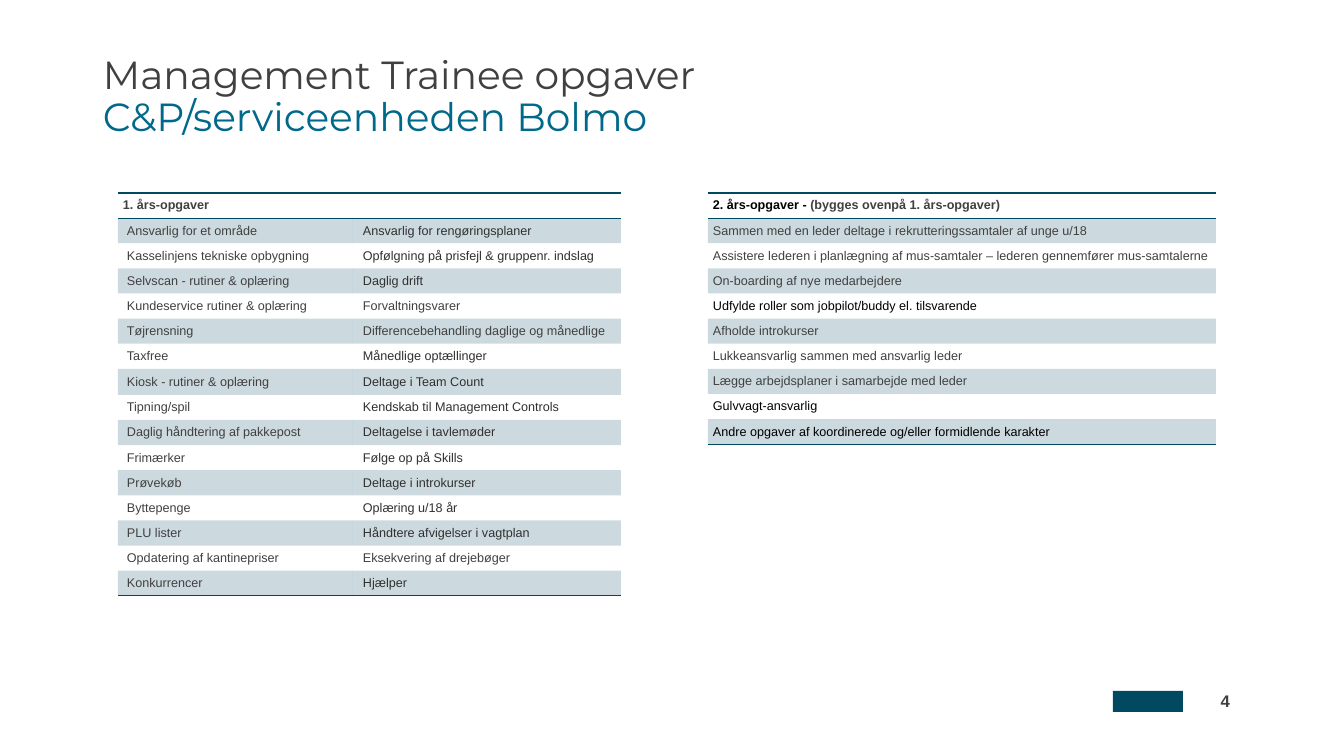
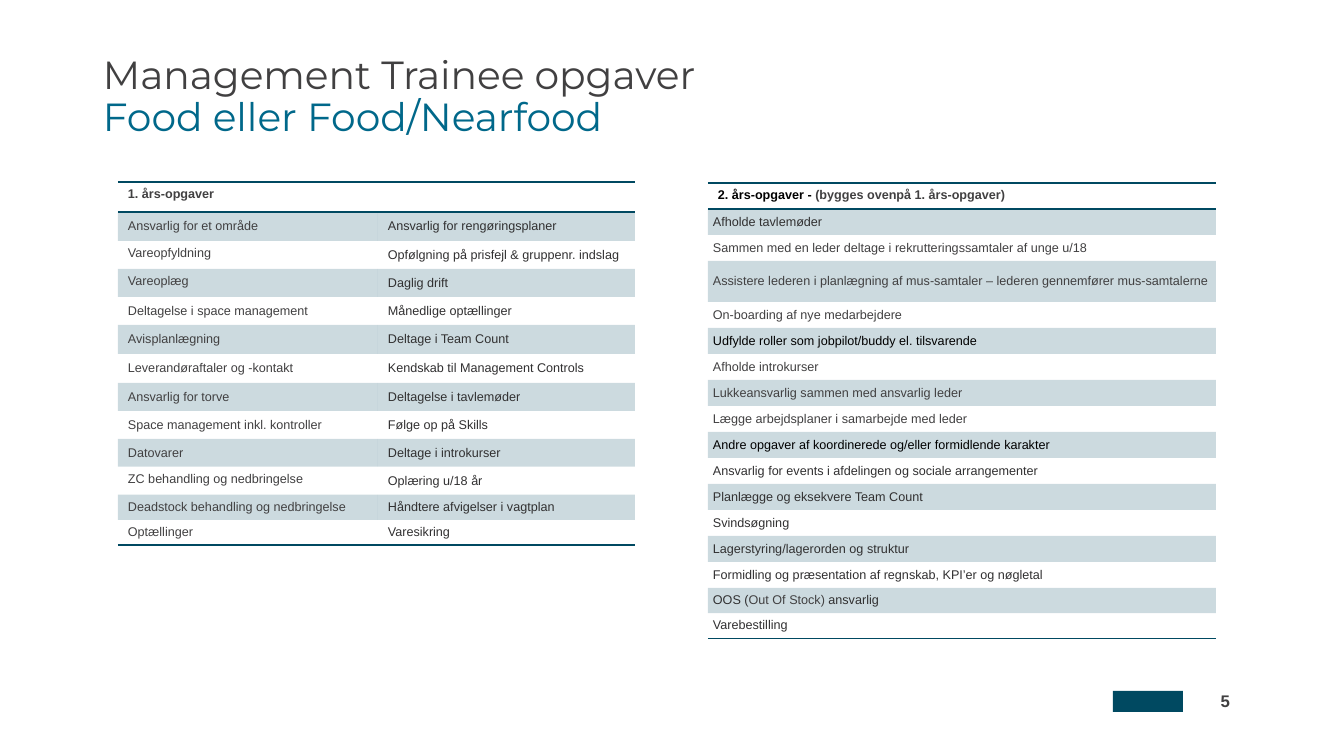
"""Build two slides of trainee tasks, each with a first-year and a second-year table."""
import dataclasses

import lxml.etree
import pptx
import pptx.dml.color
import pptx.enum.shapes
import pptx.enum.text
import pptx.oxml.ns
import pptx.util


@dataclasses.dataclass(frozen=True)
class Theme:
    teal: str = "004961"
    blue: str = "00688A"
    grey: str = "414041"
    ink: str = "313031"
    black: str = "000000"
    tint: int = 20000
    sans: str = "Arial"
    head: str = "Montserrat"
    title: int = 28
    page: int = 12
    body: int = 9
    rule: int = 1


T = Theme()
PX = 12192000 / 1344
MID = pptx.enum.text.MSO_ANCHOR.MIDDLE
TOP = pptx.enum.text.MSO_ANCHOR.TOP
LEFT = pptx.enum.text.PP_ALIGN.LEFT
RIGHT = pptx.enum.text.PP_ALIGN.RIGHT
RGB = pptx.dml.color.RGBColor.from_string
QN = pptx.oxml.ns.qn
PLAIN = "{2D5ABB26-0587-4C30-8999-92F81FD0307C}"


def px(*nums):
    return [pptx.util.Emu(round(n * PX)) for n in nums]


def put(frame, text, color=T.grey, size=T.body, font=T.sans, bold=False, align=LEFT, lead=None):
    para = frame.paragraphs[0]
    para.alignment = align
    para.line_spacing = lead
    runs = [(text, color)] if isinstance(text, str) else text
    for words, tone in runs:
        if words == "\n":
            para.add_line_break()
            continue
        run = para.add_run()
        run.text = words
        run.font.size = pptx.util.Pt(size)
        run.font.name = font
        run.font.bold = bold
        run.font.color.rgb = RGB(tone)


YEAR1 = "1. års-opgaver"
YEAR2 = [("2. års-opgaver - ", T.black), ("(bygges ovenpå 1. års-opgaver)", T.grey)]
RECRUIT = "Sammen med en leder deltage i rekrutteringssamtaler af unge u/18"
ASSIST = "Assistere lederen i planlægning af mus-samtaler – lederen gennemfører mus-samtalerne"
BOARD = "On-boarding af nye medarbejdere"
BUDDY = [("Udfylde roller som jobpilot/buddy el. tilsvarende", T.black)]
INTRO = "Afholde introkurser"
CLOSE = "Lukkeansvarlig sammen med ansvarlig leder"
PLANS = "Lægge arbejdsplaner i samarbejde med leder"
OTHER = [("Andre opgaver af koordinerede og/eller formidlende karakter", T.black)]

PAGES = [
    dict(
        topic="C&P/serviceenheden Bolmo",
        tables=[
            dict(
                spot=(118, 193), cols=[235, 268], rows=[24] * 7 + [26] + [25] * 8,
                head=YEAR1, inset=5, pads=[9, 10], tones=[T.grey, T.ink], high=[],
                cells=[
                    ("Ansvarlig for et område", "Ansvarlig for rengøringsplaner"),
                    ("Kasselinjens tekniske opbygning", "Opfølgning på prisfejl & gruppenr. indslag"),
                    ("Selvscan - rutiner & oplæring", "Daglig drift"),
                    ("Kundeservice rutiner & oplæring", [("Forvaltningsvarer", T.grey)]),
                    ("Tøjrensning", [("Differencebehandling daglige og månedlige", T.grey)]),
                    ("Taxfree", "Månedlige optællinger"),
                    ("Kiosk - rutiner & oplæring", "Deltage i Team Count"),
                    ("Tipning/spil", "Kendskab til Management Controls"),
                    ("Daglig håndtering af pakkepost", "Deltagelse i tavlemøder"),
                    ("Frimærker", "Følge op på Skills"),
                    ("Prøvekøb", "Deltage i introkurser"),
                    ("Byttepenge", "Oplæring u/18 år"),
                    ("PLU lister", "Håndtere afvigelser i vagtplan"),
                    ("Opdatering af kantinepriser", [("Eksekvering af drejebøger", T.grey)]),
                    ("Konkurrencer", "Hjælper"),
                ],
            ),
            dict(
                spot=(708, 193), cols=[508], rows=[24] * 10,
                head=YEAR2, inset=5, pads=[5], tones=[T.grey], high=[],
                cells=[
                    (RECRUIT,), (ASSIST,), (BOARD,), (BUDDY,), (INTRO,), (CLOSE,), (PLANS,),
                    ([("Gulvvagt-ansvarlig", T.black)],), (OTHER,),
                ],
            ),
        ],
    ),
    dict(
        topic="Food eller Food/Nearfood",
        tables=[
            dict(
                spot=(118, 182), cols=[260, 257],
                rows=[30, 29, 28, 28, 28, 29, 29, 28, 28, 28, 28, 24, 25],
                head=YEAR1, inset=10, pads=[10, 10], tones=[T.grey, T.ink], high=[0, 2, 3, 10, 11, 12],
                cells=[
                    ("Ansvarlig for et område", "Ansvarlig for rengøringsplaner"),
                    ("Vareopfyldning", "Opfølgning på prisfejl & gruppenr. indslag"),
                    ("Vareoplæg", "Daglig drift"),
                    ("Deltagelse i space management", "Månedlige optællinger"),
                    ("Avisplanlægning", "Deltage i Team Count"),
                    ("Leverandøraftaler og -kontakt", "Kendskab til Management Controls"),
                    ("Ansvarlig for torve", "Deltagelse i tavlemøder"),
                    ("Space management inkl. kontroller", "Følge op på Skills"),
                    ("Datovarer", "Deltage i introkurser"),
                    ("ZC behandling og nedbringelse", "Oplæring u/18 år"),
                    ("Deadstock behandling og nedbringelse", "Håndtere afvigelser i vagtplan"),
                    ("Optællinger", "Varesikring"),
                ],
            ),
            dict(
                spot=(708, 183), cols=[508], rows=[26] * 3 + [41] + [26] * 11 + [25] * 2,
                head=YEAR2, inset=10, pads=[5], tones=[T.ink], high=[0],
                cells=[
                    ("Afholde tavlemøder",),
                    *[([(text, T.grey)],) for text in (RECRUIT, ASSIST, BOARD)],
                    (BUDDY,),
                    *[([(text, T.grey)],) for text in (INTRO, CLOSE, PLANS)],
                    (OTHER,),
                    ("Ansvarlig for events i afdelingen og sociale arrangementer",),
                    ("Planlægge og eksekvere Team Count",),
                    ("Svindsøgning",),
                    ("Lagerstyring/lagerorden og struktur",),
                    ("Formidling og præsentation af regnskab, KPI’er og nøgletal",),
                    ([("OOS (", T.ink), ("Out Of Stock) ", T.grey), ("ansvarlig", T.ink)],),
                    ("Varebestilling",),
                ],
            ),
        ],
    ),
]

deck = pptx.Presentation()
deck.slide_width, deck.slide_height = px(1344, 756)

for page, info in enumerate(PAGES, start=4):
    slide = deck.slides.add_slide(deck.slide_layouts[6])

    band = slide.shapes.add_shape(pptx.enum.shapes.MSO_SHAPE.RECTANGLE, *px(1113, 691, 70, 21))
    band.shadow.inherit = False
    band.fill.solid()
    band.fill.fore_color.rgb = RGB(T.teal)
    band.line.fill.background()

    title = slide.shapes.add_textbox(*px(93, 40, 1159, 115)).text_frame
    title.word_wrap = True
    title.vertical_anchor = MID
    lines = [("Management Trainee opgaver", T.grey), ("\n", T.grey), (info["topic"], T.blue)]
    put(title, lines, size=T.title, font=T.head, lead=0.9)

    foot = slide.shapes.add_textbox(*px(1180, 686, 60, 25)).text_frame
    foot.word_wrap = True
    put(foot, str(page), size=T.page, bold=True, align=RIGHT)

    for part in info["tables"]:
        cols, rows = part["cols"], part["rows"]
        area = px(*part["spot"], sum(cols), sum(rows))
        table = slide.shapes.add_table(len(rows), len(cols), *area).table
        table.first_row = table.horz_banding = False
        table._tbl.tblPr.find(QN("a:tableStyleId")).text = PLAIN
        for col, width in zip(table.columns, px(*cols)):
            col.width = width
        for row, height in zip(table.rows, px(*rows)):
            row.height = height
        if len(cols) > 1:
            table.cell(0, 0).merge(table.cell(0, len(cols) - 1))

        grid = [(part["head"], *[""] * (len(cols) - 1)), *part["cells"]]
        for r, texts in enumerate(grid):
            for c, text in enumerate(texts):
                cell = table.cell(r, c)
                pad = part["pads"][c] if r else part["inset"]
                cell.margin_left, cell.margin_right = px(pad, 5)
                cell.margin_top = cell.margin_bottom = px(5)[0]
                cell.vertical_anchor = TOP if c == 0 and r in part["high"] else MID
                if text:
                    put(cell.text_frame, text, color=part["tones"][c] if r else T.grey, bold=r == 0)
                props = cell._tc.get_or_add_tcPr()
                if r % 2:
                    cell.fill.solid()
                    cell.fill.fore_color.rgb = RGB(T.teal)
                    tone = props.find(".//" + QN("a:srgbClr"))
                    lxml.etree.SubElement(tone, QN("a:alpha"), val=str(T.tint))
                else:
                    cell.fill.background()
                edges = {0: ["a:lnB", "a:lnT"], len(rows) - 1: ["a:lnB"]}.get(r, [])
                for edge in edges:
                    line = props.makeelement(QN(edge), w=str(pptx.util.Pt(T.rule)))
                    props.insert(0, line)
                    fill = lxml.etree.SubElement(line, QN("a:solidFill"))
                    lxml.etree.SubElement(fill, QN("a:srgbClr"), val=T.teal)

deck.save("out.pptx")
